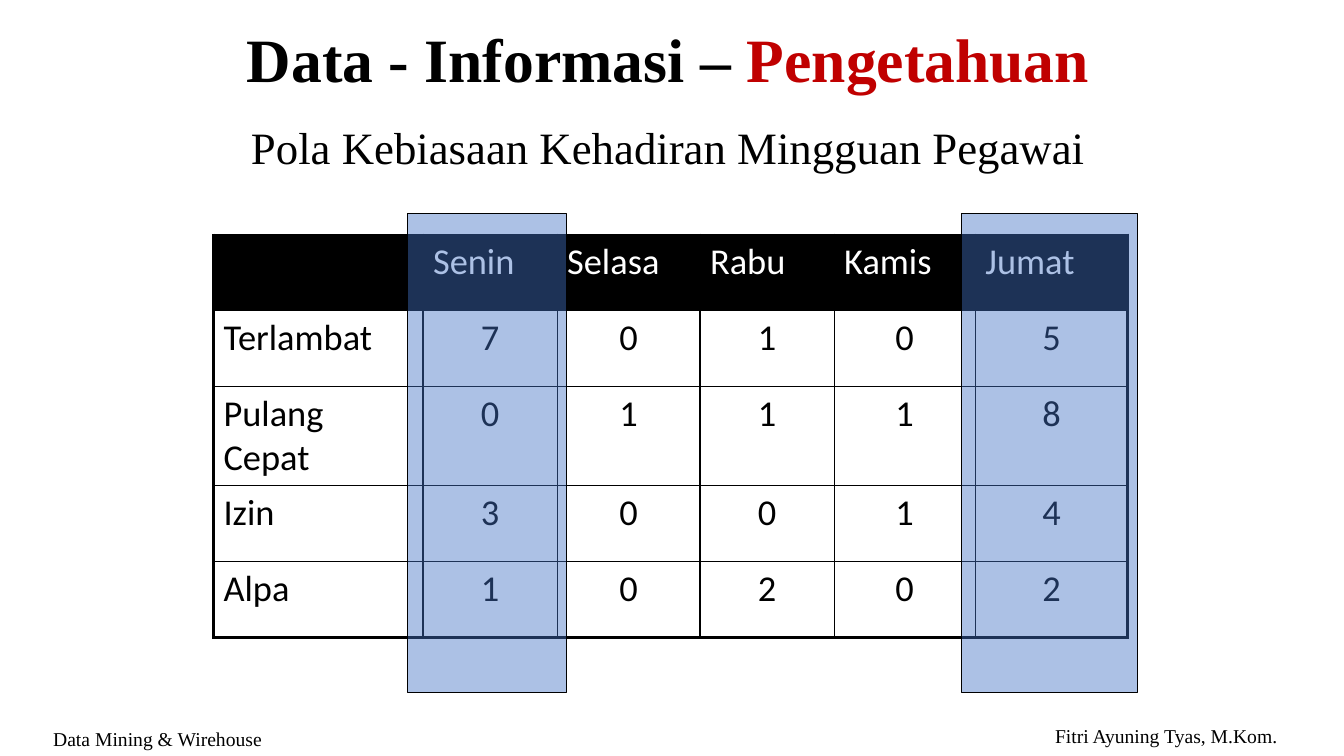
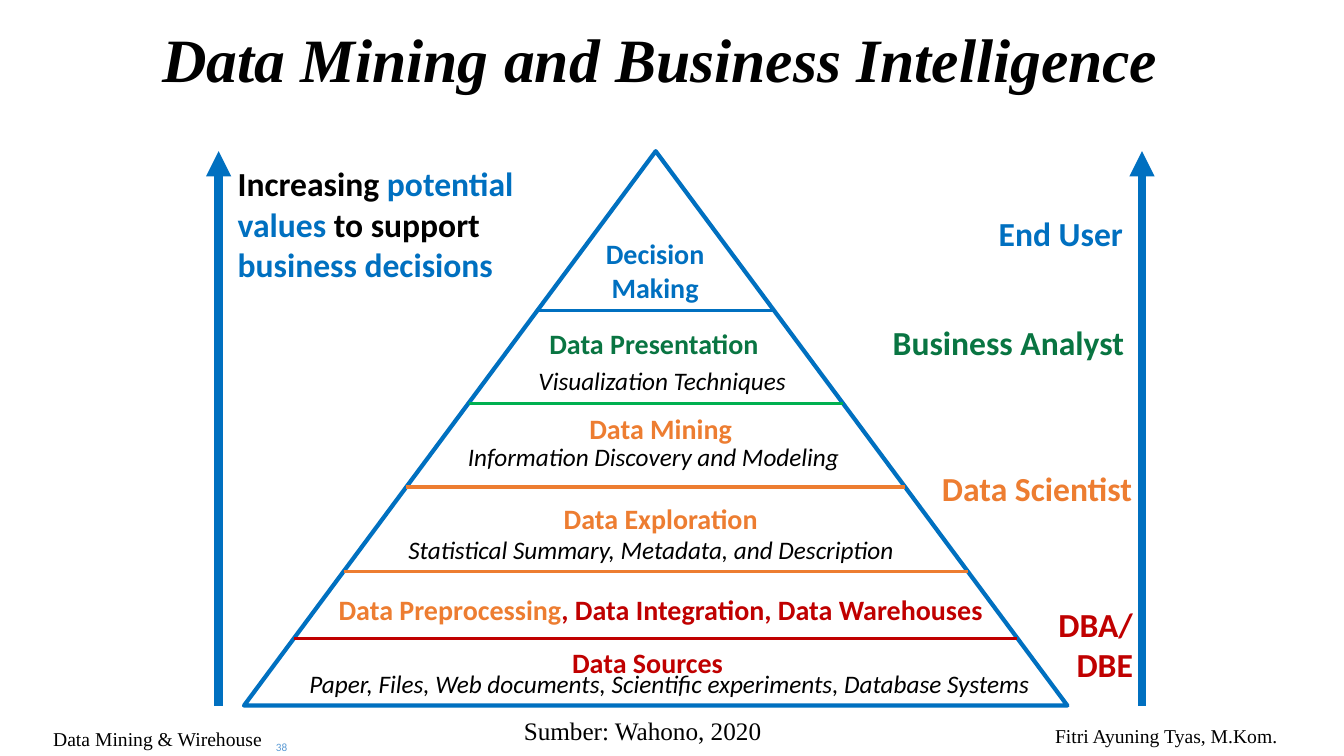
from dataclasses import dataclass

from lxml.etree import SubElement
from pptx import Presentation
from pptx.dml.color import RGBColor
from pptx.enum.shapes import MSO_CONNECTOR, MSO_SHAPE
from pptx.enum.text import MSO_ANCHOR, MSO_AUTO_SIZE, PP_ALIGN
from pptx.oxml.ns import qn
from pptx.util import Cm, Pt


@dataclass(frozen=True)
class Theme:
    serif: str = "Times New Roman"
    sans: str = "Calibri"
    black: str = "000000"
    white: str = "FFFFFF"
    red: str = "C00000"
    blue: str = "0070C0"
    green: str = "00B050"
    dark_green: str = "097542"
    orange: str = "ED7D31"
    marker: str = "4472C4"
    pale_blue: str = "5B9BD5"
    title: int = 44
    subtitle: int = 32
    table: int = 26
    role: int = 24
    level: int = 20
    detail: int = 18
    footer: int = 14
    number: int = 8


T = Theme()

FOOTERS = [
    ("Fitri Ayuning Tyas, M.Kom.", (26.34, 18.11, 6.7, 0.86)),
    ("Data Mining & Wirehouse", (1.09, 18.19, 6.7, 0.86)),
]
TITLE_BOX = (1.09, 0.36, 31.5, 2.44)

PATTERN_TITLE = [("Data - Informasi – ", T.black), ("Pengetahuan", T.red)]
PATTERN_SUBTITLE = "Pola Kebiasaan Kehadiran Mingguan Pegawai"
SUBTITLE_BOX = (1.09, 3.05, 31.5, 15.01)
ATTENDANCE = [
    ("", "Senin", "Selasa", "Rabu", "Kamis", "Jumat"),
    ("Terlambat", 7, 0, 1, 0, 5),
    ("Pulang Cepat", 0, 1, 1, 1, 8),
    ("Izin", 3, 0, 0, 1, 4),
    ("Alpa", 1, 0, 2, 0, 2),
]
TABLE_ORIGIN = (5.38, 5.92)
COL_WIDTHS = (5.28, 3.38, 3.6, 3.38, 3.56, 3.84)
ROW_HEIGHTS = (1.91, 1.91, 2.46, 1.91, 1.91)
DAY_MARKERS = [(10.26, 5.38, 4.01, 12.07), (24.23, 5.38, 4.45, 12.07)]

BI_TITLE = "Data Mining and Business Intelligence"
PYRAMID = (6.15, 3.81, 20.75, 13.97)
LEVEL_LINES = [(16.08, T.red), (14.4, T.orange), (12.27, T.orange),
               (10.16, T.green), (7.82, T.blue)]
ARROWS_X = (5.51, 28.78)
VALUE_NOTE = [("Increasing ", T.black), ("potential values ", T.blue),
              ("to support ", T.black), ("business decisions", T.blue)]
VALUE_BOX = (5.74, 3.99, 8.03, 3.33)
ROLES = [
    ("End User", T.blue, 28.55, 5.23, 4),
    ("Business Analyst", T.dark_green, 28.58, 7.98, 7.3),
    ("Data Scientist", T.orange, 28.78, 11.66, 6.4),
    ("DBA/\nDBE", T.red, 28.8, 15.09, 2.6),
]
LEVELS = [
    ([("Decision Making", T.blue)], 16.51, 5.84, 3.38),
    ([("Data Presentation", T.dark_green)], 16.48, 8.1, 6.5),
    ([("Data Mining", T.orange)], 16.65, 10.24, 5),
    ([("Data Exploration", T.orange)], 16.65, 12.5, 6.5),
    ([("Data Preprocessing", T.orange),
      (", Data Integration, Data Warehouses", T.red)], 16.65, 14.81, 17.5),
    ([("Data Sources", T.red)], 16.32, 16.13, 5),
]
DETAILS = [
    ("Visualization Techniques", 16.69, 9.09, 7.5),
    ("Information Discovery and Modeling", 16.47, 11, 10.8),
    ("Statistical Summary, Metadata, and Description", 16.41, 13.34, 14.2),
    ("Paper, Files, Web documents, Scientific experiments, Database Systems",
     16.87, 16.71, 19.8),
]
CREDIT = ("Sumber: Wahono, 2020", (12.95, 17.91, 8.56, 1.02))
NUMBER = ("38", (4.24, 18.59, 5.72, 0.46))


def rgb(color):
    return RGBColor.from_string(color)


def cms(box):
    return [Cm(v) for v in box]


def place(sp, box):
    sp.left, sp.top, sp.width, sp.height = cms(box)


def write(tf, runs, size, font=T.sans, align=PP_ALIGN.LEFT, bold=False, italic=False):
    p = tf.paragraphs[0]
    p.alignment = align
    for text, color in runs:
        for i, line in enumerate(text.split("\n")):
            if i:
                p.add_line_break()
            r = p.add_run()
            r.text = line
            f = r.font
            f.name, f.size, f.bold, f.italic = font, Pt(size), bold, italic
            f.color.rgb = rgb(color)
    return p


def add_text(s, box, runs, size, **style):
    sp = s.shapes.add_textbox(*cms(box))
    sp.text_frame.word_wrap = True
    write(sp.text_frame, runs, size, **style)
    return sp


def add_slide(prs, layout, title, italic=False):
    s = prs.slides.add_slide(prs.slide_layouts[layout])
    tf = s.shapes.title.text_frame
    tf.auto_size = MSO_AUTO_SIZE.NONE
    tf.vertical_anchor = MSO_ANCHOR.MIDDLE
    p = write(tf, title, T.title, T.serif, PP_ALIGN.CENTER, True, italic)
    p.line_spacing = 0.9
    return s


def add_footers(prs, s):
    for i, (text, box) in enumerate(FOOTERS):
        sp = add_text(s, box, [(text, T.black)], T.footer, font=T.serif)
        sp.element.nvSpPr.cNvPr.set("id", str(20 + i))
        prs.slide_master.shapes.element.append(sp.element)


def add_line(s, start, end, color, width, arrow=False):
    cx = s.shapes.add_connector(MSO_CONNECTOR.STRAIGHT, *cms(start + end))
    cx.line.color.rgb = rgb(color)
    cx.line.width = Pt(width)
    sp_pr = cx.element.spPr
    if arrow:
        SubElement(sp_pr.find(qn("a:ln")), qn("a:tailEnd"), type="triangle")
    SubElement(sp_pr, qn("a:effectLst"))


def set_borders(cell, widths):
    tc_pr = cell.fill and cell._tc.get_or_add_tcPr()
    for i, (side, width) in enumerate(widths.items()):
        ln = SubElement(tc_pr, qn(f"a:ln{side}"), w=str(Pt(width)))
        fill = SubElement(ln, qn("a:solidFill"))
        SubElement(fill, qn("a:srgbClr"), val=T.black)
        tc_pr.insert(i, ln)


def add_attendance(s):
    n_rows, n_cols = len(ATTENDANCE), len(COL_WIDTHS)
    size = (sum(COL_WIDTHS), sum(ROW_HEIGHTS))
    tbl = s.shapes.add_table(n_rows, n_cols, *cms(TABLE_ORIGIN + size)).table
    tbl.horz_banding = False
    for col, width in zip(tbl.columns, COL_WIDTHS):
        col.width = Cm(width)
    for row, height in zip(tbl.rows, ROW_HEIGHTS):
        row.height = Cm(height)
    for i, values in enumerate(ATTENDANCE):
        for j, value in enumerate(values):
            cell = tbl.cell(i, j)
            if i == 0:
                cell.fill.solid()
                cell.fill.fore_color.rgb = rgb(T.black)
            else:
                cell.fill.background()
            edges = {"L": j == 0, "R": j == n_cols - 1,
                     "T": i == 0, "B": i == n_rows - 1}
            set_borders(cell, {k: 2.25 if outer else 1 for k, outer in edges.items()})
            if value != "":
                write(cell.text_frame, [(str(value), T.black if i else T.white)], T.table,
                      align=PP_ALIGN.CENTER if i and j else PP_ALIGN.LEFT)


def add_marker(s, box):
    sp = s.shapes.add_shape(MSO_SHAPE.RECTANGLE, *cms(box))
    sp.shadow.inherit = False
    sp.fill.solid()
    sp.fill.fore_color.rgb = rgb(T.marker)
    SubElement(sp.element.spPr.find(".//" + qn("a:srgbClr")), qn("a:alpha"), val="44000")
    sp.line.color.rgb = rgb(T.black)
    sp.line.width = Pt(0.75)


def build_pattern(prs):
    s = add_slide(prs, 1, PATTERN_TITLE)
    add_footers(prs, s)
    body = s.placeholders[1]
    place(body, SUBTITLE_BOX)
    body.text_frame.auto_size = MSO_AUTO_SIZE.NONE
    p = write(body.text_frame, [(PATTERN_SUBTITLE, T.black)], T.subtitle, T.serif,
              PP_ALIGN.CENTER)
    p.line_spacing = 0.9
    p.space_before = Pt(10)
    p_pr = p._p.get_or_add_pPr()
    p_pr.set("marL", "0")
    p_pr.set("indent", "0")
    SubElement(p_pr, qn("a:buNone"))
    add_attendance(s)
    for box in DAY_MARKERS:
        add_marker(s, box)


def build_pyramid(prs):
    s = add_slide(prs, 5, [(BI_TITLE + " ", T.black)], italic=True)
    number = add_text(s, NUMBER[1], [(NUMBER[0], T.pale_blue)], T.number,
                      align=PP_ALIGN.CENTER)
    number.text_frame.vertical_anchor = MSO_ANCHOR.MIDDLE

    left, top, width, height = PYRAMID
    sp = s.shapes.add_shape(MSO_SHAPE.FLOWCHART_EXTRACT, *cms(PYRAMID))
    sp.shadow.inherit = False
    sp.fill.background()
    sp.line.color.rgb = rgb(T.blue)
    sp.line.width = Pt(3)
    apex = left + width / 2
    for y, color in LEVEL_LINES:
        half = width / 2 * (y - top) / height
        add_line(s, (apex - half, y), (apex + half, y), color, 2.25)
    for x in ARROWS_X:
        add_line(s, (x, top + height), (x, top), T.blue, 6, arrow=True)

    add_text(s, VALUE_BOX, VALUE_NOTE, T.role, bold=True)
    for text, color, right, y, w in ROLES:
        h = 1.27 if "\n" not in text else 2.31
        add_text(s, (right - w, y, w, h), [(text, color)], T.role,
                 align=PP_ALIGN.RIGHT, bold=True)
    for runs, center, y, w in LEVELS:
        add_text(s, (center - w / 2, y, w, 1.12), runs, T.level,
                 align=PP_ALIGN.CENTER, bold=True)
    for text, center, y, w in DETAILS:
        add_text(s, (center - w / 2, y, w, 1.02), [(text, T.black)], T.detail,
                 align=PP_ALIGN.CENTER, italic=True)
    add_text(s, CREDIT[1], [(CREDIT[0], T.black)], T.detail, font=T.serif)


def main():
    prs = Presentation()
    prs.slide_width, prs.slide_height = Cm(33.87), Cm(19.05)
    place(prs.slide_master.placeholders[0], TITLE_BOX)
    build_pattern(prs)
    build_pyramid(prs)
    prs.save("out.pptx")


if __name__ == "__main__":
    main()
